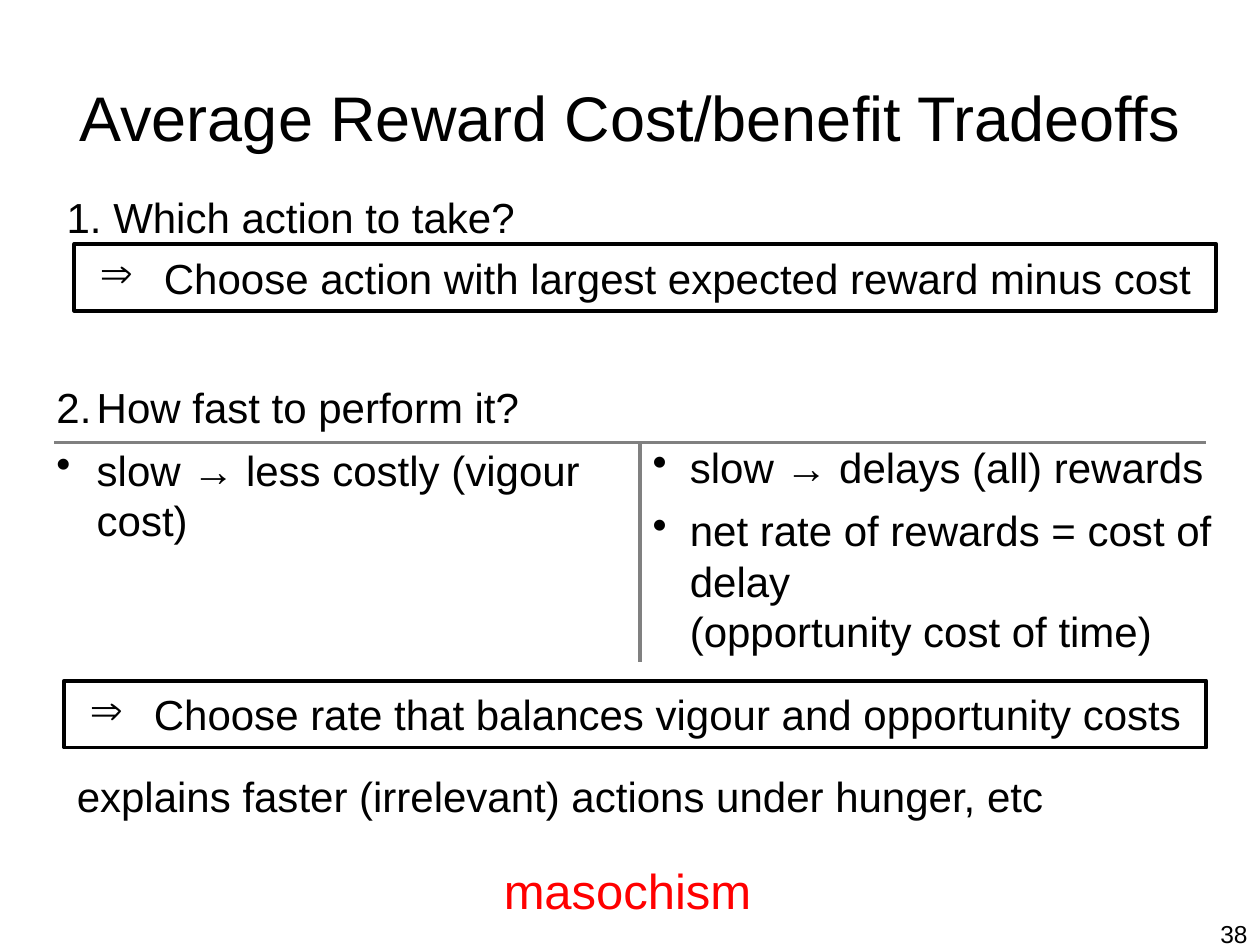
import pptx
import pptx.dml.color
import pptx.enum.shapes
import pptx.enum.text
import pptx.oxml
import pptx.oxml.ns
import pptx.util

Pt = pptx.util.Pt
ALIGN = pptx.enum.text.PP_ALIGN
ANCHOR = pptx.enum.text.MSO_ANCHOR
BLACK = pptx.dml.color.RGBColor(0x00, 0x00, 0x00)
GRAY = pptx.dml.color.RGBColor(0x80, 0x80, 0x80)
RED = pptx.dml.color.RGBColor(0xFF, 0x00, 0x00)
NS = pptx.oxml.ns.nsdecls("a")
BULLET = f'<a:buChar {NS} char="•"/>'
ARROW = f'<a:buChar {NS} char="⇒"/>'
SECOND = f'<a:buAutoNum {NS} type="arabicPeriod" startAt="2"/>'


class SlideBuilder:
    font = "Arial"
    size = 24
    gap = 7.2
    line_width = 2.25

    def __init__(self, slide):
        self.s = slide

    def fill_text(self, tf, items, size=size, color=BLACK, align=ALIGN.LEFT, indent=0):
        for i, (bullet, lines) in enumerate(items):
            p = tf.paragraphs[0] if i == 0 else tf.add_paragraph()
            p.alignment = align
            p.space_before = Pt(self.gap if i else 0)
            pPr = p._p.get_or_add_pPr()
            if indent:
                pPr.set("marL", str(Pt(indent)))
                pPr.set("indent", str(-Pt(indent)))
            if bullet:
                pPr.append(pptx.oxml.parse_xml(bullet))
            for j, line in enumerate(lines):
                if j:
                    p.add_line_break()
                r = p.add_run()
                r.text = line
                r.font.name = self.font
                r.font.size = Pt(size)
                r.font.color.rgb = color

    def text(self, x, y, w, h, items, anchor=ANCHOR.TOP, wrap=True, **style):
        tf = self.s.shapes.add_textbox(Pt(x), Pt(y), Pt(w), Pt(h)).text_frame
        tf.word_wrap = wrap
        tf.vertical_anchor = anchor
        self.fill_text(tf, items, **style)

    def conclusion(self, x, y, words):
        sp = self.s.shapes.add_shape(
            pptx.enum.shapes.MSO_SHAPE.RECTANGLE, Pt(x), Pt(y), Pt(652.5), Pt(38.2))
        sp.shadow.inherit = False
        sp.fill.background()
        sp.line.color.rgb = BLACK
        sp.line.width = Pt(self.line_width)
        tf = sp.text_frame
        tf.word_wrap = True
        tf.vertical_anchor = ANCHOR.MIDDLE
        self.fill_text(tf, [(ARROW, [words])], align=ALIGN.CENTER, indent=36.7)

    def rule(self, x1, y1, x2, y2):
        cn = self.s.shapes.add_connector(
            pptx.enum.shapes.MSO_CONNECTOR.STRAIGHT, Pt(x1), Pt(y1), Pt(x2), Pt(y2))
        cn.line.color.rgb = GRAY
        cn.line.width = Pt(self.line_width)
        cn._element.spPr.append(pptx.oxml.parse_xml(f"<a:effectLst {NS}/>"))


def main():
    prs = pptx.Presentation()
    prs.slide_width, prs.slide_height = Pt(720), Pt(540)
    b = SlideBuilder(prs.slides.add_slide(prs.slide_layouts[6]))

    b.text(552, 521.5, 168, 37.5, [(None, ["38"])], size=14, align=ALIGN.RIGHT)
    b.text(0, 21.6, 720, 90, [(None, ["Average Reward Cost/benefit Tradeoffs"])],
           anchor=ANCHOR.MIDDLE, size=36, align=ALIGN.CENTER)

    b.text(31, 106, 345.6, 36, [(None, ["1. Which action to take?"])], indent=23)
    b.conclusion(42.5, 139.5, "Choose action with largest expected reward minus cost")

    b.text(25.2, 214.5, 345.6, 102, [
        (SECOND, ["How fast to perform it?"]),
        (BULLET, ["slow → less costly (vigour cost)"]),
    ], indent=23)
    b.text(365.8, 249, 337.7, 131, [
        (BULLET, ["slow → delays (all) rewards"]),
        (BULLET, ["net rate of rewards = cost of delay ", "(opportunity cost of time)"]),
    ], indent=21.3)
    b.rule(31, 252.9, 689, 252.9)
    b.rule(365.8, 252.9, 365.8, 378)
    b.conclusion(36.8, 389, "Choose rate that balances vigour and opportunity costs")

    b.text(36.8, 436.5, 656.6, 36,
           [(None, ["explains faster (irrelevant) actions under hunger, etc"])], wrap=False)
    b.text(280.8, 488.2, 172, 41, [(None, ["masochism"])], wrap=False, size=28, color=RED)

    prs.save("out.pptx")


if __name__ == "__main__":
    main()
